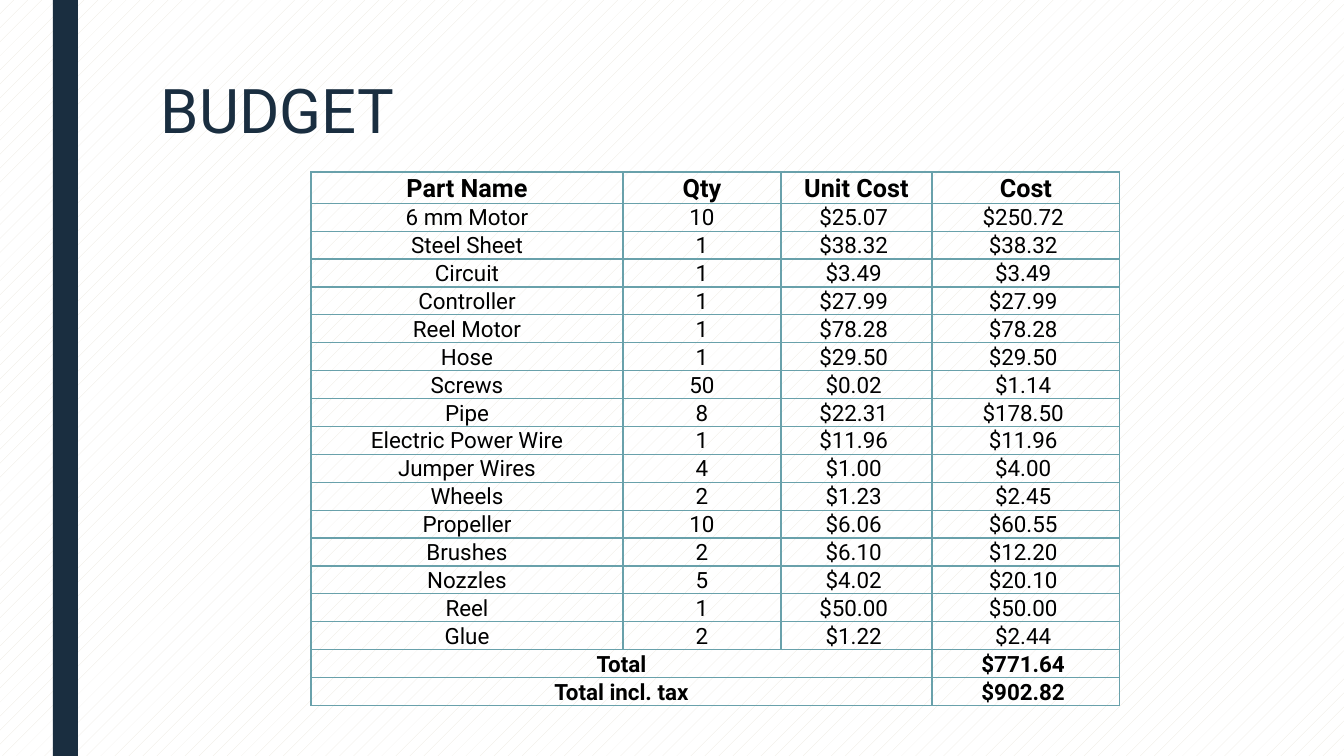
from lxml import etree
from pptx import Presentation
from pptx import util as u
from pptx.dml.color import RGBColor
from pptx.enum import dml, shapes, text
from pptx.oxml.ns import qn

NAVY = RGBColor(0x1A, 0x2E, 0x40)
TEAL = RGBColor(0x69, 0xA1, 0xAB)
SAND = RGBColor(0xEB, 0xE7, 0xDD)
WHITE = RGBColor(0xFF, 0xFF, 0xFF)
BLACK = RGBColor(0, 0, 0)
FONT = "Roboto"
PX = 914400 / 100.8

PARTS = [
    ("6 mm Motor", 10, 25.07, 250.72),
    ("Steel Sheet", 1, 38.32, 38.32),
    ("Circuit", 1, 3.49, 3.49),
    ("Controller", 1, 27.99, 27.99),
    ("Reel Motor", 1, 78.28, 78.28),
    ("Hose", 1, 29.50, 29.50),
    ("Screws", 50, 0.02, 1.14),
    ("Pipe", 8, 22.31, 178.50),
    ("Electric Power Wire", 1, 11.96, 11.96),
    ("Jumper Wires", 4, 1.00, 4.00),
    ("Wheels", 2, 1.23, 2.45),
    ("Propeller", 10, 6.06, 60.55),
    ("Brushes", 2, 6.10, 12.20),
    ("Nozzles", 5, 4.02, 20.10),
    ("Reel", 1, 50.00, 50.00),
    ("Glue", 2, 1.22, 2.44),
]
TOTALS = [("Total", 771.64), ("Total incl. tax", 902.82)]
COLUMN_WIDTHS = [312, 158, 151, 188]
ROW_HEIGHT = 25


def px(*lengths):
    return [u.Emu(round(length * PX)) for length in lengths]


def set_borders(cell):
    properties = cell._tc.get_or_add_tcPr()
    for position, side in enumerate(("a:lnL", "a:lnR", "a:lnT", "a:lnB")):
        border = etree.Element(qn(side), w=str(u.Pt(1)))
        fill = etree.SubElement(border, qn("a:solidFill"))
        etree.SubElement(fill, qn("a:srgbClr"), val=str(TEAL))
        properties.insert(position, border)


deck = Presentation()
deck.slide_width, deck.slide_height = px(1344, 756)
slide = deck.slides.add_slide(deck.slide_layouts[6])

backdrop = slide.background.fill
backdrop.patterned()
backdrop.pattern = dml.MSO_PATTERN.PERCENT_5
backdrop.fore_color.rgb = SAND
backdrop.back_color.rgb = WHITE

side_bar = slide.shapes.add_shape(shapes.MSO_SHAPE.RECTANGLE, *px(53, 0, 25, 756))
side_bar.shadow.inherit = False
side_bar.fill.solid()
side_bar.fill.fore_color.rgb = NAVY
side_bar.line.fill.background()

title = slide.shapes.add_textbox(*px(151, 76, 1058, 163)).text_frame
title.word_wrap = True
heading = title.paragraphs[0]
heading.text = "BUDGET"
heading.line_spacing = 0.89
heading.font.name = FONT
heading.font.size = u.Pt(44)
heading.font.color.rgb = NAVY

rows = [("Part Name", "Qty", "Unit Cost", "Cost")]
rows += [(name, str(qty), f"${unit:.2f} ", f"${cost:.2f} ") for name, qty, unit, cost in PARTS]
rows += [(label, "", "", f"${amount:.2f} ") for label, amount in TOTALS]

budget = slide.shapes.add_table(
    len(rows), len(COLUMN_WIDTHS),
    *px(311, 172, sum(COLUMN_WIDTHS), ROW_HEIGHT * len(rows))).table
budget.first_row = budget.horz_banding = False
for column, width in zip(budget.columns, COLUMN_WIDTHS):
    column.width = px(width)[0]

first_total = len(PARTS) + 1
for r, values in enumerate(rows):
    budget.rows[r].height = px(ROW_HEIGHT)[0]
    for c, value in enumerate(values):
        cell = budget.cell(r, c)
        cell.fill.background()
        set_borders(cell)
        cell.vertical_anchor = text.MSO_ANCHOR.BOTTOM
        cell.margin_left, cell.margin_right, cell.margin_top, cell.margin_bottom = px(1, 1, 1, 0)
        entry = cell.text_frame.paragraphs[0]
        entry.text = value
        entry.alignment = text.PP_ALIGN.CENTER
        entry.font.name = FONT
        entry.font.size = u.Pt(18 if r == 0 else 16)
        entry.font.bold = r == 0 or r >= first_total
        entry.font.color.rgb = BLACK
    if r >= first_total:
        budget.cell(r, 0).merge(budget.cell(r, 2))

deck.save("out.pptx")
